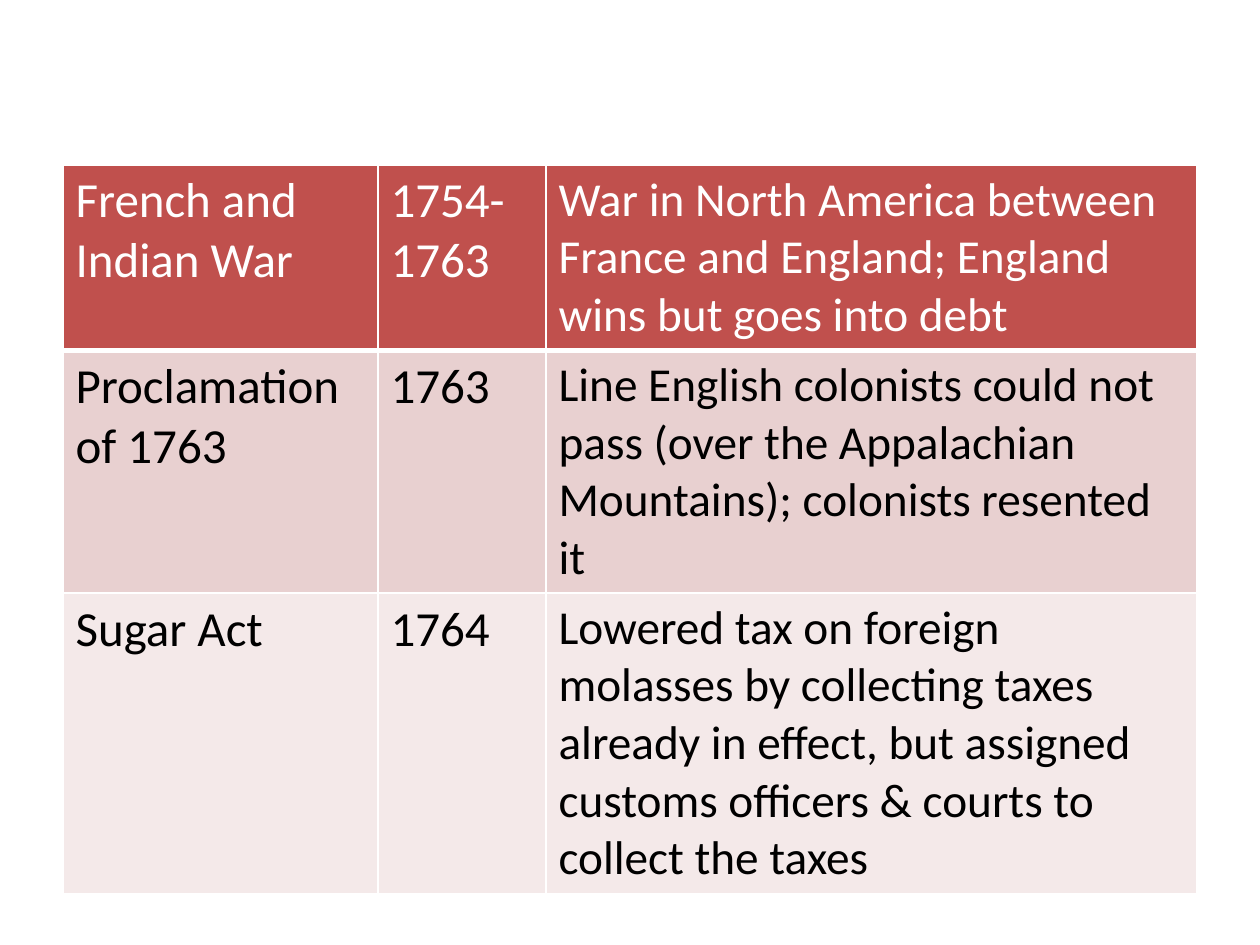
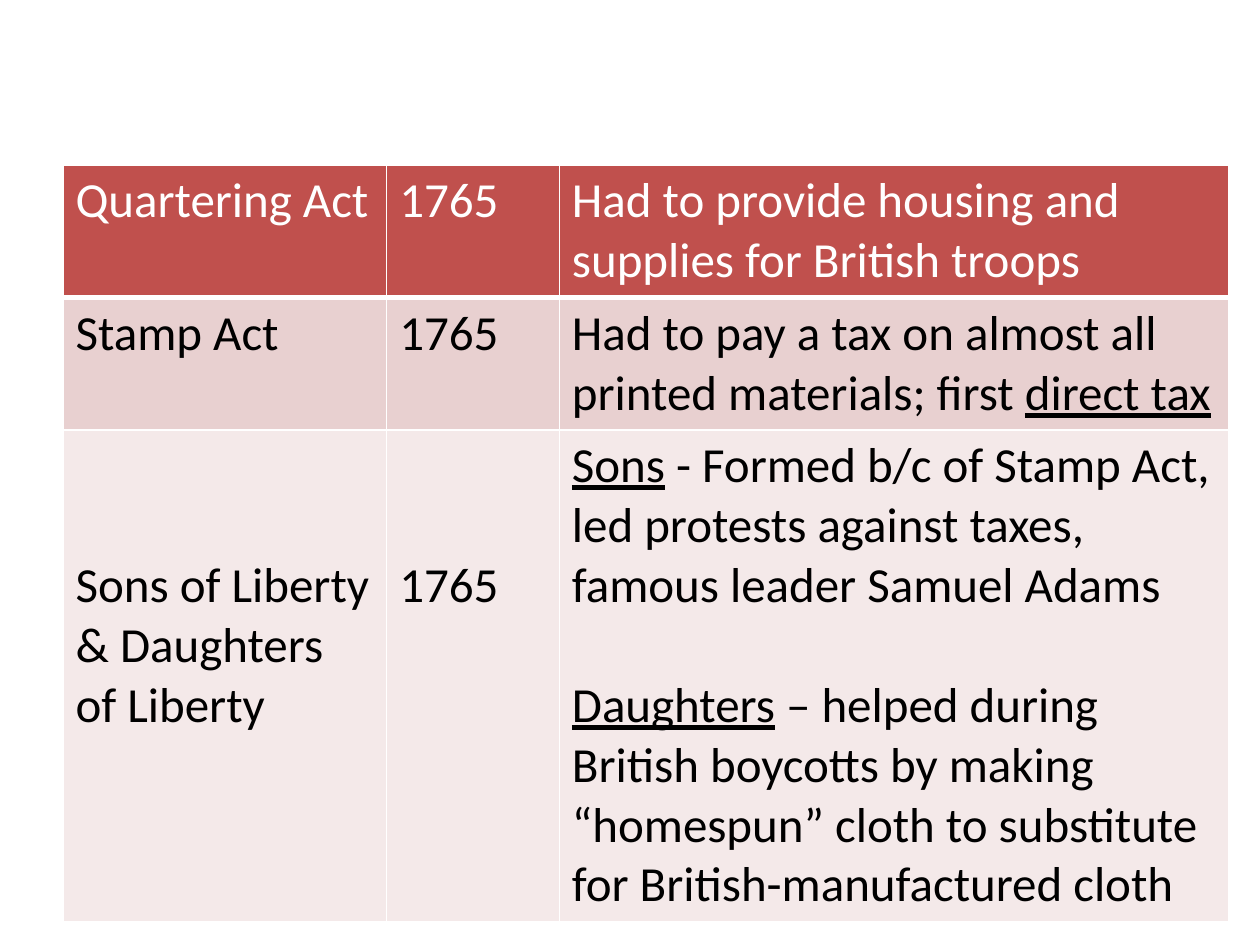
from lxml import etree
from pptx import Presentation
from pptx.dml.color import RGBColor
from pptx.enum import text
from pptx.oxml import ns
from pptx.util import Pt

COLORS = {"header": "C0504D", "odd": "E8D0D0", "even": "F4E9E9",
          "rule": "FFFFFF", "light": "FFFFFF", "dark": "000000"}

# Layout shared by both tables, in points
TABLE_LEFT, TABLE_TOP = 36, 94.3
COLUMN_RATIO = (180, 96, 372)
LINE = 34.2  # height of one 28 pt line
INSET = 3.6


def set_all(target, values):
    for name, value in values.items():
        setattr(target, name, value)


class EventDeck:
    """Holds the style and the slide being built."""

    def __init__(self):
        self.prs = Presentation()
        set_all(self.prs, {"slide_width": Pt(720), "slide_height": Pt(540)})
        self.slide = None

    def add_slide(self):
        self.slide = self.prs.slides.add_slide(self.prs.slide_layouts[6])

    def add_events(self, events, width, heights, note_size=28, lead_lines=()):
        """Add event/year/note rows; lead_lines maps a row to lines left free above."""
        lead_lines = dict(lead_lines)
        table = self.slide.shapes.add_table(
            len(events), len(COLUMN_RATIO), Pt(TABLE_LEFT), Pt(TABLE_TOP),
            Pt(width), Pt(sum(heights))).table
        set_all(table, {"first_row": False, "horz_banding": False})
        for column, share in zip(table.columns, COLUMN_RATIO):
            column.width = Pt(width * share / sum(COLUMN_RATIO))
        for row, height in zip(table.rows, heights):
            row.height = Pt(height)

        for r, (event, year, note) in enumerate(events):
            lead = lead_lines.get(r, 0) * LINE
            band = "header" if r == 0 else "odd" if r % 2 else "even"
            ink = "light" if r == 0 else "dark"
            parts = ((event, 28, lead), (year, 28, lead), (note, note_size, 0))
            for c, (content, size, gap) in enumerate(parts):
                cell = table.cell(r, c)
                self.style_cell(cell, band, gap, bottom=3 if r == 0 else 1)
                self.add_text(cell.text_frame, content, size, ink)

    def style_cell(self, cell, band, gap, bottom):
        set_all(cell, {"margin_top": Pt(INSET + gap), "margin_bottom": Pt(INSET),
                       "margin_left": Pt(7.2), "margin_right": Pt(7.2),
                       "vertical_anchor": text.MSO_ANCHOR.TOP})
        properties = cell._tc.get_or_add_tcPr()
        for side, weight in (("L", 1), ("R", 1), ("T", 1), ("B", bottom)):
            line = etree.SubElement(properties, ns.qn(f"a:ln{side}"), w=str(Pt(weight)))
            fill = etree.SubElement(line, ns.qn("a:solidFill"))
            etree.SubElement(fill, ns.qn("a:srgbClr"), val=COLORS["rule"])
        cell.fill.solid()
        cell.fill.fore_color.rgb = RGBColor.from_string(COLORS[band])

    def add_text(self, frame, content, size, ink):
        """Add paragraphs split at line ends; text between _ marks is underlined."""
        for i, line in enumerate(content.split("\n")):
            paragraph = frame.add_paragraph() if i else frame.paragraphs[0]
            if i:
                paragraph.space_before = Pt(LINE)
            for j, piece in enumerate(line.split("_")):
                if piece:
                    run = paragraph.add_run()
                    run.text = piece
                    set_all(run.font, {"name": "Calibri", "size": Pt(size),
                                       "bold": False, "underline": j % 2 == 1})
                    run.font.color.rgb = RGBColor.from_string(COLORS[ink])


def main():
    deck = EventDeck()

    # War and first acts, 1754-1764
    deck.add_slide()
    deck.add_events([
        ("French and Indian War", "1754-1763",
         "War in North America between France and England; "
         "England wins but goes into debt"),
        ("Proclamation of 1763", "1763",
         "Line English colonists could not pass (over the Appalachian Mountains); "
         "colonists resented it"),
        ("Sugar Act", "1764",
         "Lowered tax on foreign molasses by collecting taxes already in effect, "
         "but assigned customs officers & courts to collect the taxes"),
    ], width=648, heights=(105.6, 138.4, 171.4), note_size=27)

    # Acts and protests of 1765
    deck.add_slide()
    deck.add_events([
        ("Quartering Act", "1765",
         "Had to provide housing and supplies for British troops"),
        ("Stamp Act", "1765",
         "Had to pay a tax on almost all printed materials; first _direct tax_"),
        ("Sons of Liberty & Daughters of Liberty", "1765",
         "_Sons_ - Formed b/c of Stamp Act, led protests against taxes, "
         "famous leader Samuel Adams\n"
         "_Daughters_ – helped during British boycotts by making “homespun” cloth "
         "to substitute for British-manufactured cloth"),
    ], width=666, heights=(75.5, 75.5, 280.4), lead_lines={2: 2})

    deck.prs.save("out.pptx")


if __name__ == "__main__":
    main()
